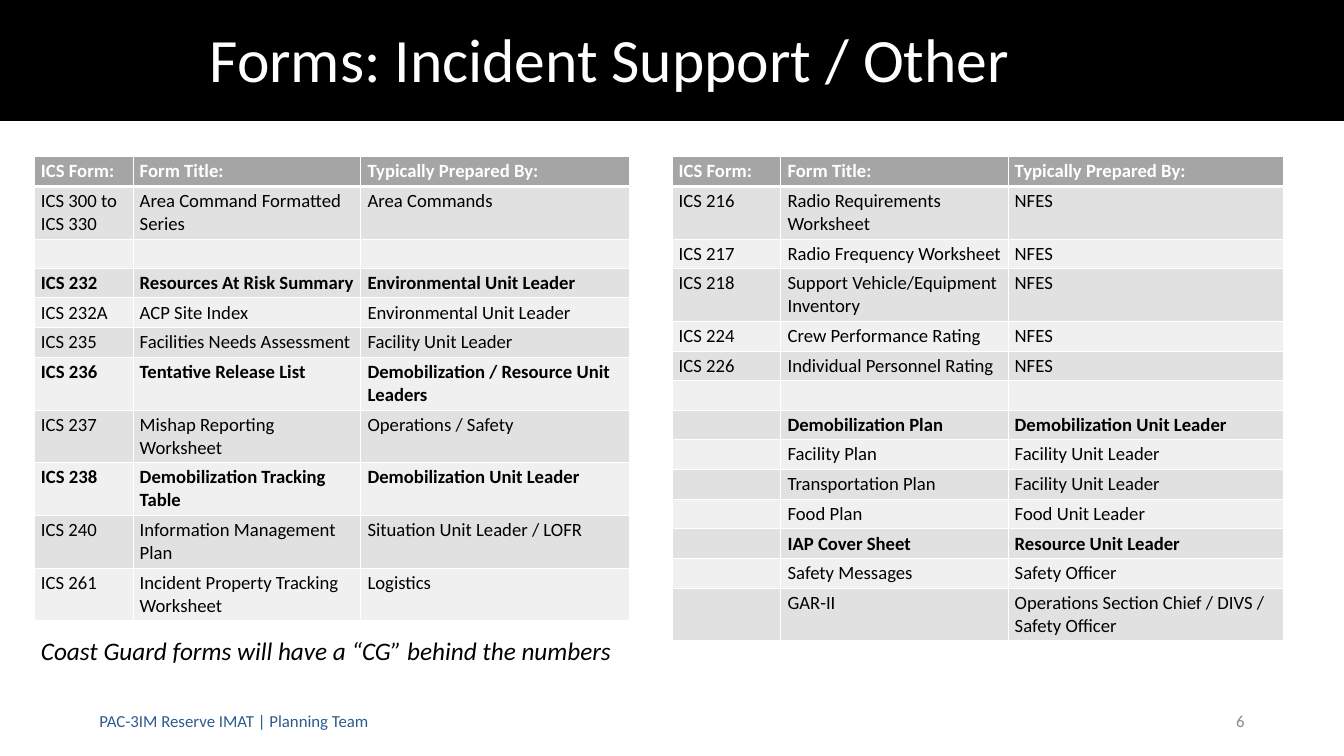
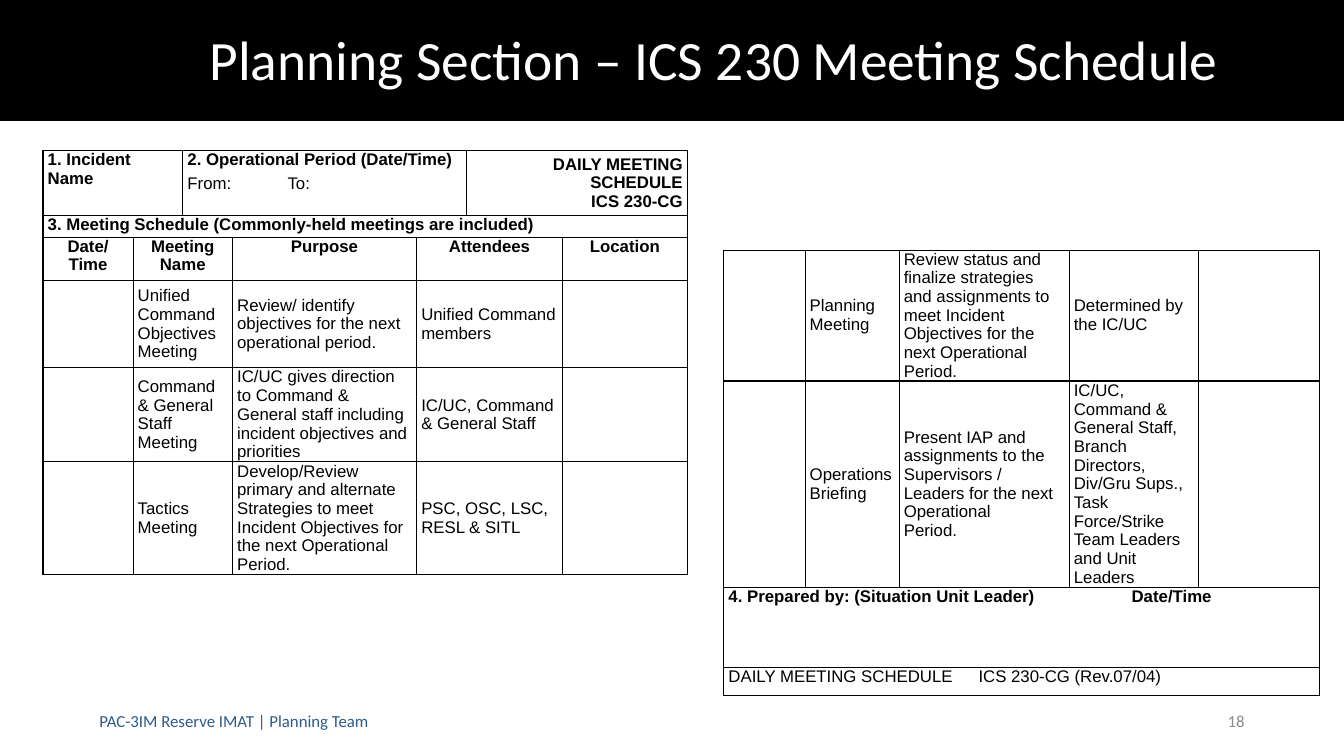
from lxml import etree
from pptx import Presentation
from pptx import util as u
from pptx.dml.color import RGBColor
from pptx.enum import shapes, text
from pptx.oxml.ns import qn

BLACK, WHITE = "000000", "FFFFFF"
HEADER_GREY, DARK_STRIPE, LIGHT_STRIPE = "A5A5A5", "E1E1E1", "F0F0F0"
FOOTER_BLUE, NUMBER_GREY = "2D5B8D", "8C8C8C"
FOOTER = "PAC-3IM Reserve IMAT | Planning Team"
LEFT, CENTER, RIGHT = text.PP_ALIGN.LEFT, text.PP_ALIGN.CENTER, text.PP_ALIGN.RIGHT
TOP, MIDDLE = text.MSO_ANCHOR.TOP, text.MSO_ANCHOR.MIDDLE
THIN, HEAVY, HEADER_RULE = 1, 1.5, 3
FORM_LIST_TEXT = dict(size=20, pitch=24.6)
SCHEDULE_TEXT = dict(size=18, font="Arial", pitch=20)

FORM_HEADER = ("ICS Form:", "Form Title:", "Typically Prepared By:")
SUPPORT_FORMS = [
    ("ICS 300 to ICS 330", "Area Command Formatted Series", "Area Commands"),
    ("", "", ""),
    ("ICS 232", "Resources At Risk Summary", "Environmental Unit Leader"),
    ("ICS 232A", "ACP Site Index", "Environmental Unit Leader"),
    ("ICS 235", "Facilities Needs Assessment", "Facility Unit Leader"),
    ("ICS 236", "Tentative Release List", "Demobilization / Resource Unit Leaders"),
    ("ICS 237", "Mishap Reporting Worksheet", "Operations / Safety"),
    ("ICS 238", "Demobilization Tracking Table", "Demobilization Unit Leader"),
    ("ICS 240", "Information Management Plan", "Situation Unit Leader / LOFR"),
    ("ICS 261", "Incident Property Tracking Worksheet", "Logistics"),
]
OTHER_FORMS = [
    ("ICS 216", "Radio Requirements Worksheet", "NFES"),
    ("ICS 217", "Radio Frequency Worksheet", "NFES"),
    ("ICS 218", "Support Vehicle/Equipment Inventory", "NFES"),
    ("ICS 224", "Crew Performance Rating", "NFES"),
    ("ICS 226", "Individual Personnel Rating", "NFES"),
    ("", "", ""),
    ("", "Demobilization Plan", "Demobilization Unit Leader"),
    ("", "Facility Plan", "Facility Unit Leader"),
    ("", "Transportation Plan", "Facility Unit Leader"),
    ("", "Food Plan", "Food Unit Leader"),
    ("", "IAP Cover Sheet", "Resource Unit Leader"),
    ("", "Safety Messages", "Safety Officer"),
    ("", "GAR-II", "Operations Section Chief / DIVS / Safety Officer"),
]

# Each row: column spans, cell texts, text format
MEETING_SPANS = (1, 2, 1, 2, 1)
HEADING = dict(bold=True)
COLUMN_HEAD = dict(bold=True, align=CENTER)
MEETING = dict(anchor=MIDDLE)
SCHEDULE_START = [
    ((2, 3, 2), ("1. Incident Name", "2. Operational Period (Date/Time)",
                 "DAILY MEETING SCHEDULE\nICS 230-CG"), HEADING),
    ((7,), ("3. Meeting Schedule (Commonly-held meetings are included)",), HEADING),
    (MEETING_SPANS, ("Date/ Time", "Meeting Name", "Purpose", "Attendees", "Location"),
     COLUMN_HEAD),
    (MEETING_SPANS, ("", "Unified Command Objectives Meeting",
                     "Review/ identify objectives for the next operational period.",
                     "Unified Command members", ""), MEETING),
    (MEETING_SPANS, ("", "Command & General Staff Meeting",
                     "IC/UC gives direction to Command & General staff including "
                     "incident objectives and priorities",
                     "IC/UC, Command & General Staff", ""), MEETING),
    (MEETING_SPANS, ("", "Tactics Meeting",
                     "Develop/Review primary and alternate Strategies to meet Incident "
                     "Objectives for the next Operational Period.",
                     "PSC, OSC, LSC,\nRESL & SITL", ""), MEETING),
]
SCHEDULE_END = [
    ((1,) * 5, ("", "Planning Meeting",
                "Review status and finalize strategies and assignments to meet "
                "Incident Objectives for the next Operational Period.",
                "Determined by the IC/UC", ""), MEETING),
    ((1,) * 5, ("", "Operations Briefing",
                "Present IAP and assignments to the Supervisors / Leaders for the "
                "next Operational\nPeriod.",
                "IC/UC, Command & General Staff, Branch Directors, Div/Gru Sups., "
                "Task Force/Strike Team Leaders and Unit Leaders", ""), MEETING),
    ((5,), ("4. Prepared by: (Situation Unit Leader)\tDate/Time",), dict(bold=True, tab=(6, "l"))),
    ((5,), ("DAILY MEETING SCHEDULE\tICS 230-CG (Rev.07/04)",), dict(tab=(6.44, "r"))),
]


def rgb(color):
    return RGBColor.from_string(color)


def write(paragraph, words, size=18, font="Calibri", color=BLACK, bold=False,
          italic=False, align=LEFT, before=0, pitch=None, tab=None):
    """Fill a paragraph; pitch is an exact line height in points."""
    paragraph.text = words
    paragraph.alignment = align
    paragraph.space_before = u.Pt(before)
    if pitch:
        paragraph.line_spacing = u.Pt(pitch)
    if tab:
        position, side = tab
        tabs = etree.SubElement(paragraph._p.get_or_add_pPr(), qn("a:tabLst"))
        etree.SubElement(tabs, qn("a:tab"), pos=str(u.Inches(position)), algn=side)
    for run in paragraph.runs:
        run.font.size = u.Pt(size)
        run.font.name = font
        run.font.bold, run.font.italic = bold, italic
        run.font.color.rgb = rgb(color)
    if not words:
        paragraph._p.get_or_add_endParaRPr().set("sz", str(size * 100))


def add_label(slide, box, words, anchor=MIDDLE, **style):
    frame = slide.shapes.add_textbox(*map(u.Inches, box)).text_frame
    frame.word_wrap = True
    frame.vertical_anchor = anchor
    write(frame.paragraphs[0], words, **style)


def add_band(slide):
    """Put the title band on the slide's layout, behind all titles."""
    band = slide.shapes.add_shape(shapes.MSO_SHAPE.RECTANGLE, 0, 0, u.Inches(20), u.Inches(1.8))
    band.shadow.inherit = False
    band.fill.solid()
    band.fill.fore_color.rgb = rgb(BLACK)
    band.line.fill.background()
    slide.slide_layout.shapes._spTree.insert(2, band._element)


def add_page(deck, title_words, title_size, number):
    slide = deck.slides.add_slide(deck.slide_layouts[5])
    title = slide.shapes.title
    title.left, title.top, title.width, title.height = map(u.Inches, (3.02, 0.05, 16.62, 1.77))
    frame = title.text_frame
    frame.auto_size = text.MSO_AUTO_SIZE.NONE
    frame.vertical_anchor = MIDDLE
    write(frame.paragraphs[0], title_words, size=title_size, color=WHITE)
    frame.paragraphs[0].line_spacing = 0.9
    add_label(slide, (1.38, 10.43, 9.1, 0.6), FOOTER, color=FOOTER_BLUE)
    add_label(slide, (14.12, 10.43, 4.5, 0.6), str(number), color=NUMBER_GREY, align=RIGHT)
    return slide


def set_borders(cell, color, left, right, top, bottom):
    properties = cell._tc.get_or_add_tcPr()
    for side, points in zip("LRTB", (left, right, top, bottom)):
        line = etree.SubElement(properties, qn(f"a:ln{side}"), w=str(u.Pt(points)))
        fill = etree.SubElement(line, qn("a:solidFill"))
        etree.SubElement(fill, qn("a:srgbClr"), val=color)


def add_grid(slide, left, top, widths, heights):
    """Add a table without banding, sized by its columns and rows."""
    box = map(u.Inches, (left, top, sum(widths), sum(heights)))
    table = slide.shapes.add_table(len(heights), len(widths), *box).table
    table.first_row = table.horz_banding = False
    for column, width in zip(table.columns, widths):
        column.width = u.Inches(width)
    for row, height in zip(table.rows, heights):
        row.height = u.Inches(height)
    return table


def add_form_list(slide, left, widths, forms, bold_rows):
    rows = [FORM_HEADER, *forms]
    table = add_grid(slide, left, 2.33, widths, [0.41] * len(rows))
    for r, entries in enumerate(rows):
        header = r == 0
        stripe = HEADER_GREY if header else (LIGHT_STRIPE, DARK_STRIPE)[r % 2]
        for c, words in enumerate(entries):
            cell = table.cell(r, c)
            set_borders(cell, WHITE, THIN, THIN, HEADER_RULE if r == 1 else THIN,
                        HEADER_RULE if header else THIN)
            cell.fill.solid()
            cell.fill.fore_color.rgb = rgb(stripe)
            write(cell.text_frame.paragraphs[0], words, **FORM_LIST_TEXT,
                  color=WHITE if header else BLACK, bold=header or r in bold_rows)


def add_schedule(slide, left, top, widths, heights, rows, heavy_rules):
    """Add a ruled form; heavy_rules numbers its thick horizontal lines."""
    table = add_grid(slide, left, top, widths, heights)

    def rule(index):
        return HEAVY if index in heavy_rules else THIN

    for r, (spans, entries, style) in enumerate(rows):
        style = dict(style)
        anchor = style.pop("anchor", TOP)
        inner = THIN if len(spans) == 5 else HEAVY
        first = 0
        for span, words in zip(spans, entries):
            after = first + span
            cell = table.cell(r, first)
            if span > 1:
                cell.merge(table.cell(r, after - 1))
            for c in range(first, after):
                part = table.cell(r, c)
                set_borders(part, BLACK, HEAVY if first == 0 else inner,
                            HEAVY if after == len(widths) else inner, rule(r), rule(r + 1))
                part.fill.background()
            cell.margin_left = cell.margin_right = u.Inches(0.07)
            cell.margin_top = cell.margin_bottom = 0
            cell.vertical_anchor = anchor
            write(cell.text_frame.paragraphs[0], words, **SCHEDULE_TEXT, **style)
            first = after
    return table


def main():
    deck = Presentation()
    deck.slide_width, deck.slide_height = u.Inches(20), u.Inches(11.25)

    forms = add_page(deck, "Forms: Incident Support / Other", 66, 6)
    add_band(forms)
    add_form_list(forms, 0.51, (1.47, 3.39, 3.99), SUPPORT_FORMS, {3, 6, 8})
    add_form_list(forms, 10, (1.62, 3.38, 4.1), OTHER_FORMS, {7, 11})
    add_label(forms, (0.51, 9.4, 8.85, 0.56), "Coast Guard forms will have a “CG” behind the numbers",
              anchor=TOP, size=27, italic=True)

    meetings = add_page(deck, "Planning Section – ICS 230 Meeting Schedule", 59.4, 18)
    start = add_schedule(meetings, 0.64, 2.24, (1.34, 0.74, 0.74, 2.74, 0.74, 1.43, 1.86),
                         (0.97, 0.32, 0.65, 1.29, 1.4, 1.68), SCHEDULE_START, {0, 1, 2})
    period = start.cell(0, 2).text_frame.add_paragraph()
    write(period, "From:\tTo:", **SCHEDULE_TEXT, before=6, tab=(1.49, "l"))
    form_name = start.cell(0, 5)
    form_name.vertical_anchor = MIDDLE
    form_name.text_frame.paragraphs[0].alignment = RIGHT
    add_schedule(meetings, 10.77, 3.72, (1.21, 1.4, 2.53, 1.93, 1.8),
                 (1.95, 3.07, 1.19, 0.42), SCHEDULE_END, {1, 2, 3, 4})

    deck.save("out.pptx")


if __name__ == "__main__":
    main()
